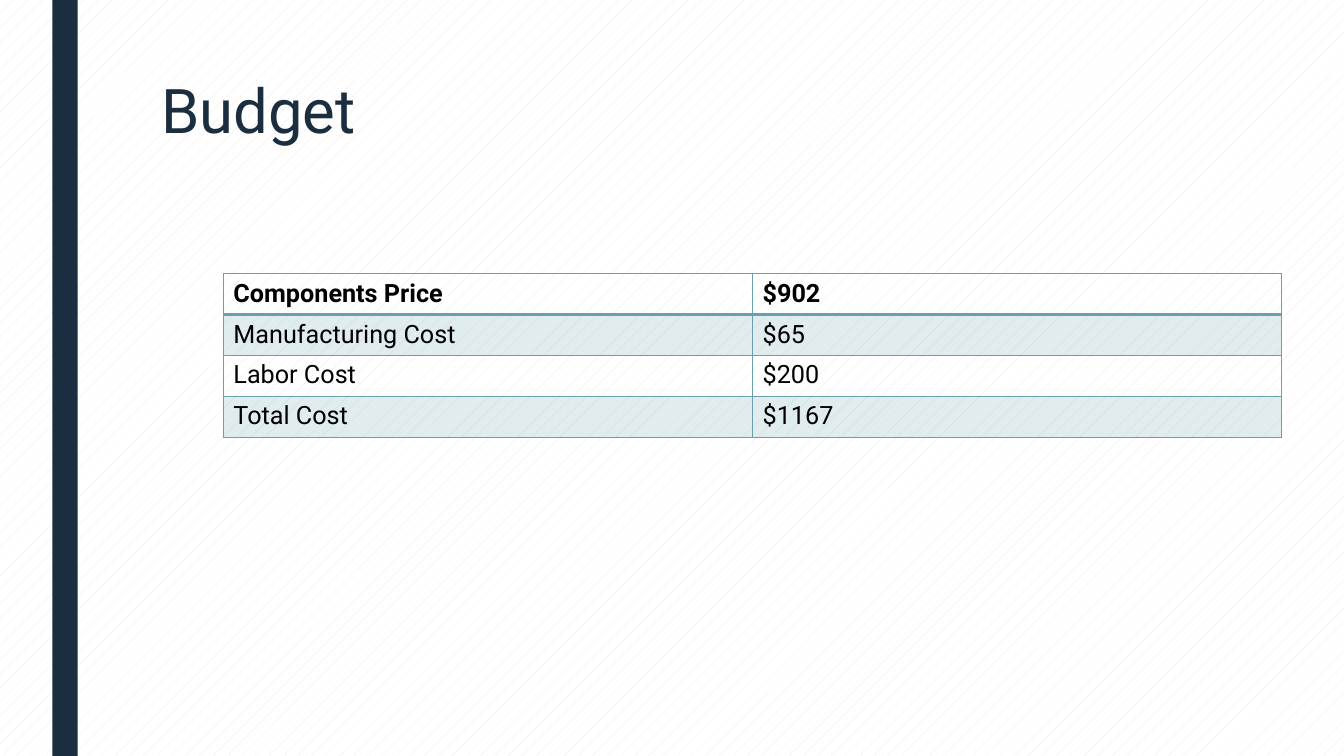
from lxml.etree import SubElement as Sub
from pptx import Presentation
from pptx.dml.color import RGBColor
from pptx.enum.dml import MSO_PATTERN as Pat
from pptx.enum.shapes import MSO_SHAPE as Shape
from pptx.enum.text import MSO_ANCHOR as Anchor, PP_ALIGN as Align
from pptx.oxml.ns import qn
from pptx.util import Cm, Pt

NAVY = RGBColor(0x1A, 0x2E, 0x40)
TEAL = RGBColor(0x69, 0xA1, 0xAB)
SAND = RGBColor(0xEB, 0xE7, 0xDD)
WHITE = RGBColor(0xFF, 0xFF, 0xFF)
BLACK = RGBColor(0, 0, 0)
FONT = "Roboto"
COSTS = [
    ("Components Price", "$902"),
    ("Manufacturing Cost", "$65"),
    ("Labor Cost", "$200"),
    ("Total Cost", "$1167"),
]


def write(frame, text, size=18, color=BLACK, bold=False, space=None):
    para = frame.paragraphs[0]
    para.alignment = Align.LEFT
    para.line_spacing = space
    run = para.add_run()
    run.text = text
    font = run.font
    font.name, font.size, font.bold = FONT, Pt(size), bold
    font.color.rgb = color


def edge(cell, widths):
    """Draw the cell's borders; widths maps a side (L, R, T, B) to points."""
    props = cell._tc.get_or_add_tcPr()
    for spot, (side, width) in enumerate(widths.items()):
        line = Sub(props, qn(f"a:ln{side}"), w=str(Pt(width)))
        fill = Sub(line, qn("a:solidFill"))
        Sub(fill, qn("a:srgbClr"), val=str(TEAL))
        props.insert(spot, line)


def tint(cell, alpha):
    cell.fill.solid()
    cell.fill.fore_color.rgb = TEAL
    shade = cell._tc.tcPr.find(qn("a:solidFill"))[0]
    Sub(shade, qn("a:alpha"), val=str(alpha * 1000))


def add_back(slide, left, top, width, height):
    # Patterned background
    fill = slide.background.fill
    fill.patterned()
    fill.pattern = Pat.PERCENT_5
    fill.fore_color.rgb = SAND
    fill.back_color.rgb = WHITE
    # Side bar
    bar = slide.shapes.add_shape(Shape.RECTANGLE, left, top, width, height)
    bar.shadow.inherit = False
    bar.fill.solid()
    bar.fill.fore_color.rgb = NAVY
    bar.line.fill.background()


def add_title(slide, text, left, top, width, height):
    title = slide.shapes.title
    title.left, title.top, title.width, title.height = left, top, width, height
    title.text_frame.vertical_anchor = Anchor.TOP
    write(title.text_frame, text, size=44, color=NAVY, space=0.89)


def add_costs(slide, rows, left, top, width, height):
    frame = slide.shapes.add_table(len(rows), len(rows[0]), left, top, width, height)
    table = frame.table
    table.horz_banding = False
    for r, row in enumerate(rows):
        for c, text in enumerate(row):
            cell = table.cell(r, c)
            write(cell.text_frame, text, bold=r == 0)
            # Odd rows are tinted, the rest show the background
            if r % 2:
                tint(cell, 20)
            else:
                cell.fill.background()
            # A heavier rule runs under the first row
            edge(cell, {"L": 1, "R": 1, "T": 2 if r == 1 else 1, "B": 2 if r == 0 else 1})


def main():
    deck = Presentation()
    deck.slide_width, deck.slide_height = Cm(33.87), Cm(19.05)
    slide = deck.slides.add_slide(deck.slide_layouts[5])
    add_back(slide, Cm(1.32), 0, Cm(0.64), deck.slide_height)
    add_title(slide, "Budget", Cm(3.81), Cm(1.9), Cm(26.67), Cm(4.12))
    add_costs(slide, COSTS, Cm(5.63), Cm(6.9), Cm(26.67), Cm(4.12))
    deck.save("out.pptx")


if __name__ == "__main__":
    main()
